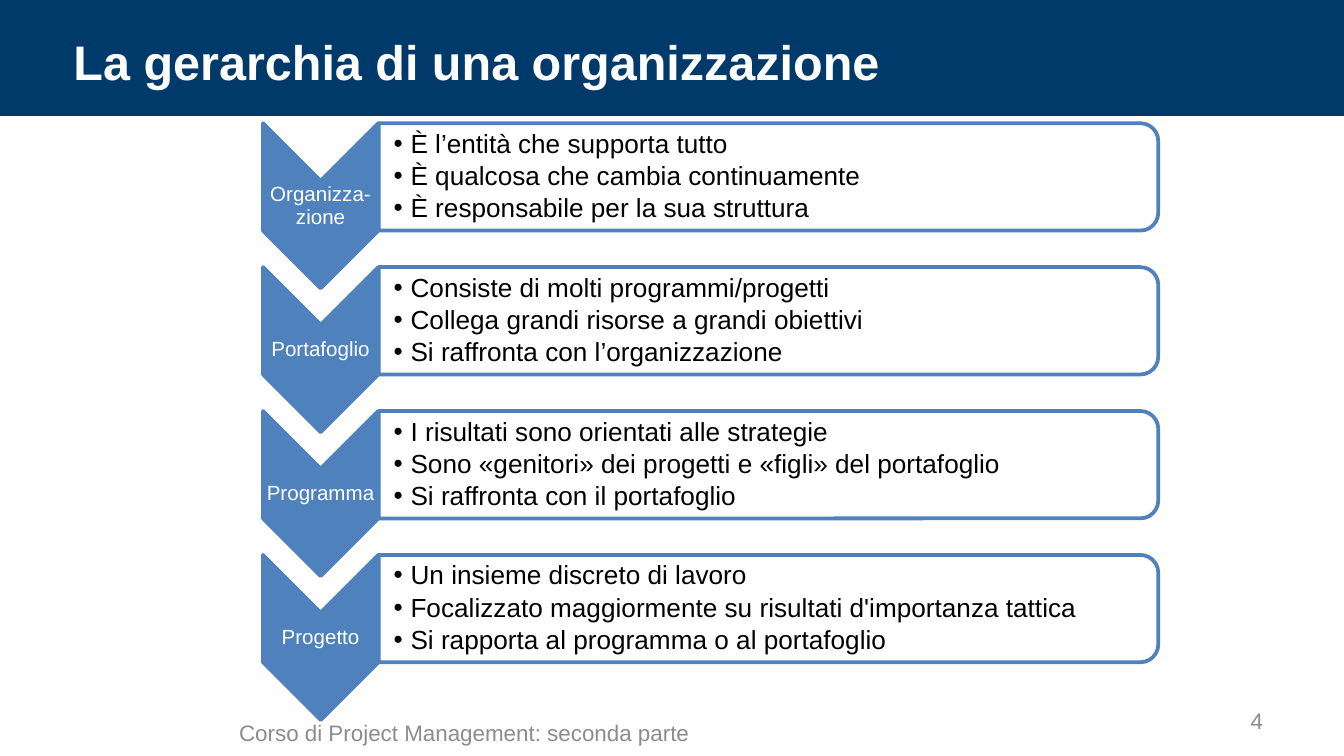
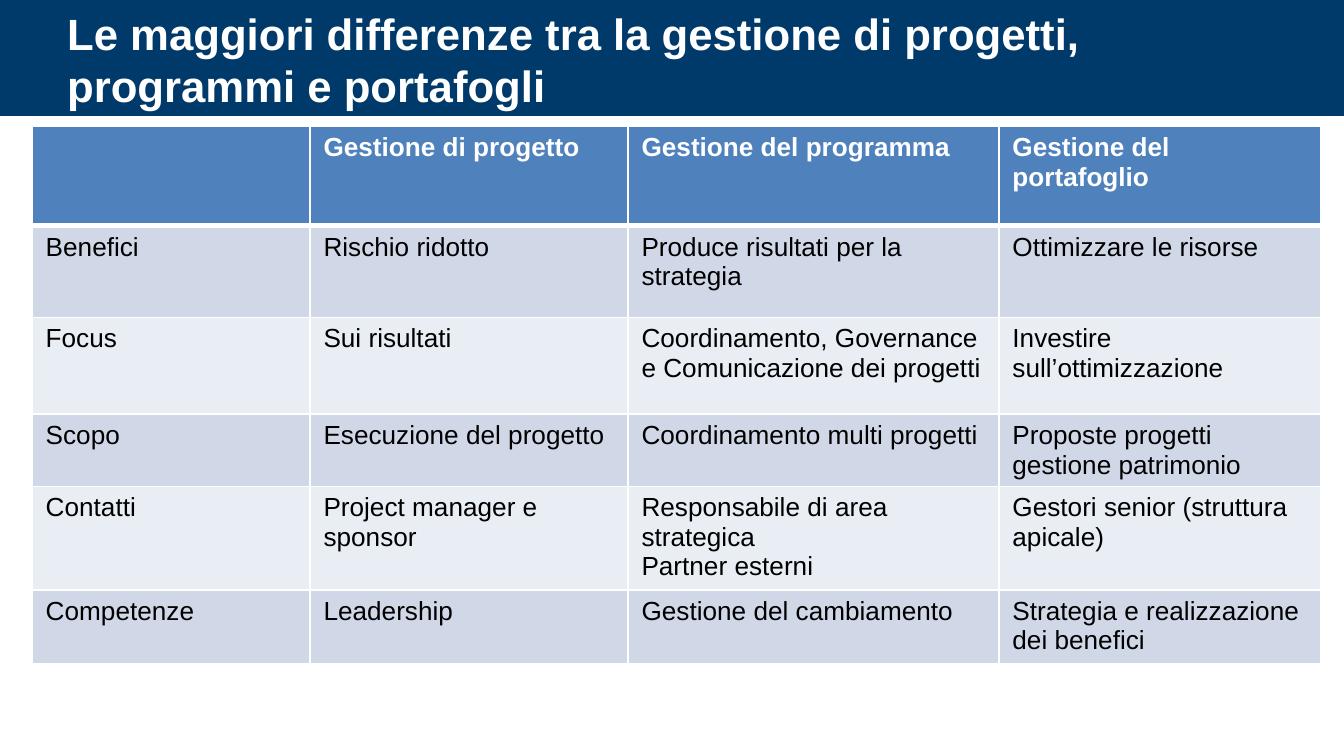
from lxml import etree
from pptx import Presentation
from pptx import util as u
from pptx.dml import color
from pptx.enum import shapes, text
from pptx.oxml import ns

FONT = "Arial"
NAVY, BLUE, WHITE, BLACK, GREY = "003A6A", "4F81BD", "FFFFFF", "000000", "8C8C8C"
BANDS = ("D0D8E8", "E9EDF4")
PITCH = 2.72
LEVELS = [
    ("Organizza-zione", ["È l’entità che supporta tutto",
                         "È qualcosa che cambia continuamente",
                         "È responsabile per la sua struttura"]),
    ("Portafoglio", ["Consiste di molti programmi/progetti",
                     "Collega grandi risorse a grandi obiettivi",
                     "Si raffronta con l’organizzazione"]),
    ("Programma", ["I risultati sono orientati alle strategie",
                   "Sono «genitori» dei progetti e «figli» del portafoglio",
                   "Si raffronta con il portafoglio"]),
    ("Progetto", ["Un insieme discreto di lavoro",
                  "Focalizzato maggiormente su risultati d'importanza tattica",
                  "Si rapporta al programma o al portafoglio"]),
]
COLUMN_WIDTHS = [5.25, 6.01, 7.01, 6.09]
ROW_HEIGHTS = [1.88, 1.73, 1.83, 1.17, 1.83, 1.4]
DIFFERENCES = [
    ["", "Gestione di progetto", "Gestione del programma", "Gestione del portafoglio"],
    ["Benefici", "Rischio ridotto", "Produce risultati per la strategia",
     "Ottimizzare le risorse"],
    ["Focus", "Sui risultati", "Coordinamento, Governance\ne Comunicazione dei progetti",
     "Investire sull’ottimizzazione"],
    ["Scopo", "Esecuzione del progetto", "Coordinamento multi progetti",
     "Proposte progetti gestione patrimonio"],
    ["Contatti", "Project manager e sponsor",
     "Responsabile di area strategica\nPartner esterni",
     "Gestori senior (struttura apicale)"],
    ["Competenze", "Leadership", "Gestione del cambiamento",
     "Strategia e realizzazione dei benefici"],
]


def rgb(value):
    return color.RGBColor.from_string(value)


def style(para, size, ink, bold=False):
    para.font.name = FONT
    para.font.size = u.Pt(size)
    para.font.bold = bold
    para.font.color.rgb = rgb(ink)


def add_shape(page, kind, left, top, width, height, fill, line=None):
    shape = page.shapes.add_shape(kind, *map(u.Cm, (left, top, width, height)))
    shape.shadow.inherit = False
    shape.fill.solid()
    shape.fill.fore_color.rgb = rgb(fill)
    if line:
        shape.line.color.rgb = rgb(line)
        shape.line.width = u.Pt(2)
    else:
        shape.line.fill.background()
    return shape


def add_turned(page, kind, left, top, width, height, fill):
    shift = (width - height) / 2
    shape = add_shape(page, kind, left + shift, top - shift, height, width, fill, BLUE)
    shape.rotation = 90
    return shape


def add_text(page, left, top, width, height, lines, size, ink, bold=False,
             align=text.PP_ALIGN.LEFT, anchor=text.MSO_ANCHOR.MIDDLE,
             insets=(0.25, 0.13, 0.25, 0.13), spacing=1.0, after=0, bullet=False):
    box = page.shapes.add_textbox(*map(u.Cm, (left, top, width, height)))
    frame = box.text_frame
    frame.word_wrap = True
    frame.vertical_anchor = anchor
    (frame.margin_left, frame.margin_top,
     frame.margin_right, frame.margin_bottom) = map(u.Cm, insets)
    frame.text = "\n".join(lines)
    for para in frame.paragraphs:
        para.alignment = align
        para.line_spacing = spacing
        para.space_after = u.Pt(after)
        if bullet:
            add_bullet(para)
        style(para, size, ink, bold)


def add_bullet(para):
    properties = para._p.get_or_add_pPr()
    properties.set("marL", str(u.Cm(0.32)))
    properties.set("indent", str(-u.Cm(0.32)))
    etree.SubElement(properties, ns.qn("a:buFont"), typeface=FONT)
    etree.SubElement(properties, ns.qn("a:buChar"), char="•")


def add_page(deck, title, left, top, size):
    page = deck.slides.add_slide(deck.slide_layouts[6])
    add_shape(page, shapes.MSO_SHAPE.RECTANGLE, 0, 0, 25.4, 2.19, NAVY)
    add_text(page, left, top, 22.86, 1.12, [title], size, WHITE, bold=True,
             anchor=text.MSO_ANCHOR.TOP)
    return page


def add_footer(page, caption, number):
    add_text(page, 22.6, 13.24, 1.52, 0.76, [number], 12, GREY,
             align=text.PP_ALIGN.RIGHT)
    add_text(page, 4.27, 13.46, 18.34, 0.76, [caption], 12, GREY)


def add_level(page, top, name, points):
    tight = (0.03, 0.03, 0.03, 0.03)
    add_turned(page, shapes.MSO_SHAPE.CHEVRON, 4.97, top, 2.18, 3.12, BLUE)
    add_text(page, 4.97, top + 1.1, 2.18, 0.94, [name], 11, WHITE,
             align=text.PP_ALIGN.CENTER, insets=tight, spacing=0.9)
    panel = add_turned(page, shapes.MSO_SHAPE.ROUND_2_SAME_RECTANGLE,
                       7.16, top, 14.73, 2.03, WHITE)
    fill_color = panel.fill._xPr.find(ns.qn("a:solidFill"))[0]
    etree.SubElement(fill_color, ns.qn("a:alpha"), val="90000")
    add_text(page, 7.16, top + 0.1, 14.63, 1.83, points, 14, BLACK,
             insets=(0.28, 0.03, 0.03, 0.03), spacing=0.9, after=2.1, bullet=True)


def set_borders(cell, top, bottom):
    properties = cell._tc.get_or_add_tcPr()
    widths = {"lnL": 1, "lnR": 1, "lnT": top, "lnB": bottom}
    for position, (side, width) in enumerate(widths.items()):
        line = etree.Element(ns.qn("a:" + side), w=str(u.Pt(width)))
        fill = etree.SubElement(line, ns.qn("a:solidFill"))
        etree.SubElement(fill, ns.qn("a:srgbClr"), val=WHITE)
        properties.insert(position, line)


def add_table(page, left, top, widths, heights, rows):
    frame = page.shapes.add_table(len(rows), len(widths), u.Cm(left), u.Cm(top),
                                  u.Cm(sum(widths)), u.Cm(sum(heights)))
    table = frame.table
    for column, width in zip(table.columns, widths):
        column.width = u.Cm(width)
    for index, (row, height, words) in enumerate(zip(table.rows, heights, rows)):
        header = index == 0
        row.height = u.Cm(height)
        for cell, content in zip(row.cells, words):
            cell.text = content
            cell.margin_bottom = u.Cm(0.05)
            cell.fill.solid()
            cell.fill.fore_color.rgb = rgb(BLUE if header else BANDS[(index - 1) % 2])
            set_borders(cell, 3 if index == 1 else 1, 3 if header else 1)
            for para in cell.text_frame.paragraphs:
                style(para, 14, WHITE if header else BLACK, header)


def main():
    deck = Presentation()
    deck.slide_width, deck.slide_height = u.Cm(25.4), u.Cm(14.29)

    page = add_page(deck, "La gerarchia di una organizzazione", 1.14, 0.48, 26)
    add_footer(page, "Corso di Project Management: seconda parte", "4")
    for index, (name, points) in enumerate(LEVELS):
        add_level(page, 2.33 + index * PITCH, name, points)

    page = add_page(deck, "Le maggiori differenze tra la gestione di progetti, "
                    "programmi e portafogli", 1.02, 0, 23.4)
    add_table(page, 0.61, 2.39, COLUMN_WIDTHS, ROW_HEIGHTS, DIFFERENCES)

    deck.save("out.pptx")


if __name__ == "__main__":
    main()
